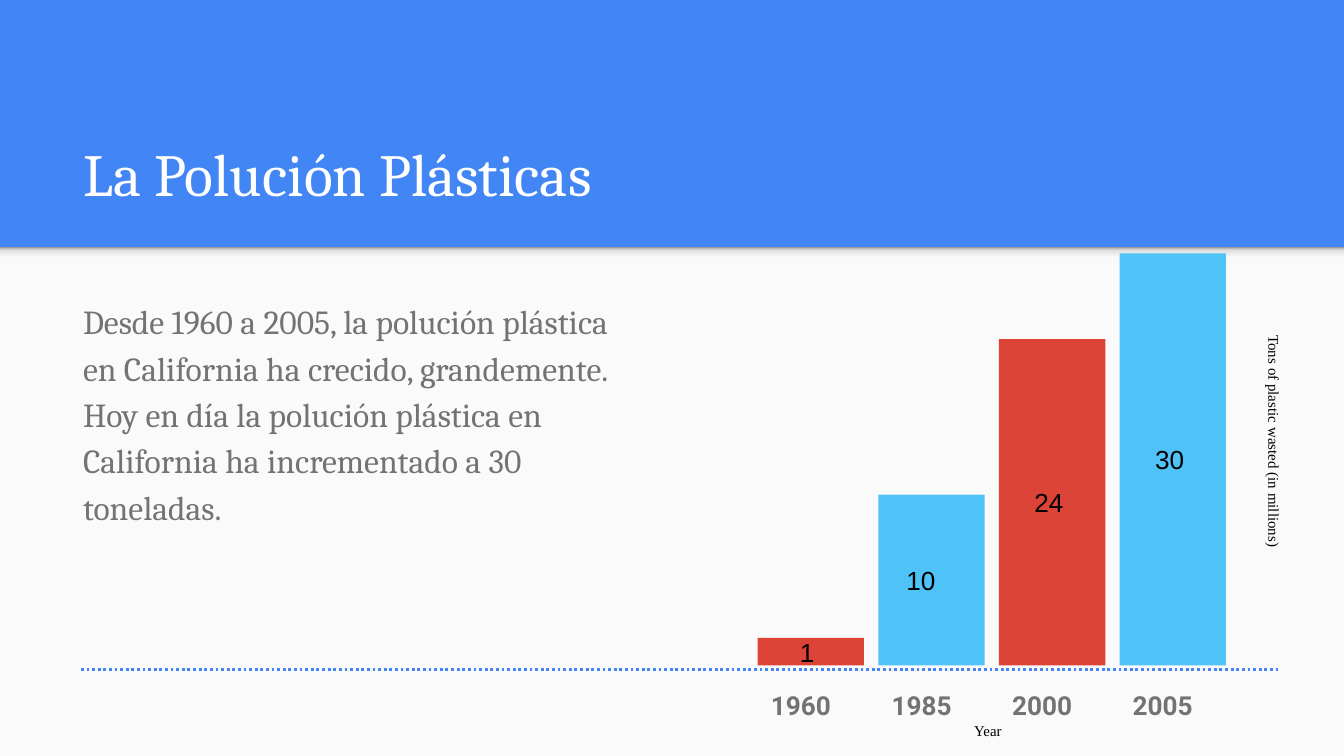
"""Build the slide on plastic pollution in California with its bar graphic."""
from lxml.etree import SubElement
from pptx import Presentation
from pptx.dml.color import RGBColor
from pptx.enum.dml import MSO_LINE
from pptx.enum.shapes import MSO_CONNECTOR, MSO_SHAPE
from pptx.enum.text import MSO_ANCHOR, MSO_AUTO_SIZE, PP_ALIGN
from pptx.oxml.ns import qn
from pptx.util import Cm, Pt


def rgb(color):
    """Return the colour for a hex string."""
    return RGBColor.from_string(color)


def write(tf, text, size, font, color, anchor=MSO_ANCHOR.TOP):
    """Fill a text frame with one left-aligned paragraph and return it."""
    tf.word_wrap = True
    tf.auto_size = MSO_AUTO_SIZE.NONE
    tf.vertical_anchor = anchor
    tf.margin_left = tf.margin_right = tf.margin_top = tf.margin_bottom = Cm(0.25)
    p = tf.paragraphs[0]
    p.text = text
    p.alignment = PP_ALIGN.LEFT
    p.font.size = Pt(size)
    p.font.name = font
    p.font.color.rgb = rgb(color)
    return p


prs = Presentation()
prs.slide_width, prs.slide_height = Cm(25.4), Cm(14.29)
s = prs.slides.add_slide(prs.slide_layouts[5])
s.background.fill.solid()
s.background.fill.fore_color.rgb = rgb("4285F4")

title = s.shapes.title
title.left, title.top, title.width, title.height = Cm(1.32), Cm(2.06), Cm(22.83), Cm(2.13)
write(title.text_frame, "La Polución Plásticas", 32, "Cambria", "FFFFFF", MSO_ANCHOR.BOTTOM)

panel = s.shapes.add_shape(MSO_SHAPE.RECTANGLE, 0, Cm(4.67), Cm(25.4), Cm(9.62))
panel.fill.solid()
panel.fill.fore_color.rgb = rgb("FAFAFA")

shade = s.shapes.add_shape(MSO_SHAPE.RECTANGLE, 0, Cm(4.67), Cm(25.4), Cm(0.3))
shade.fill.gradient()
shade.fill.gradient_angle = 90
stops = shade.fill._fill._gradFill.find(qn("a:gsLst"))
for gs in list(stops):
    stops.remove(gs)
for pos, color in [(0, "F9F9F9"), (36, "F9F9F9"), (80, "DEDEDE"), (100, "999999")]:
    gs = SubElement(stops, qn("a:gs"), pos=str(pos * 1000))
    SubElement(gs, qn("a:srgbClr"), val=color)

for sp in (panel, shade):
    sp.line.fill.background()
    sp.shadow.inherit = False

body = s.shapes.add_textbox(Cm(1.32), Cm(5.33), Cm(10.87), Cm(7.52))
p = write(
    body.text_frame,
    "Desde 1960 a 2005, la polución plástica en California ha crecido, grandemente. "
    "Hoy en día la polución plástica en California ha incrementado a 30 toneladas.",
    18, "Cambria", "737373",
)
p.line_spacing = 1.15
p.space_after = Pt(16)

left, pitch, base = 14.32, 2.28, 12.58
bars = [
    ("1960", "1", 0.52, 0.8, "DB4437"),
    ("1985", "10", 3.23, 0.53, "4FC3F7"),
    ("2000", "24", 6.17, 0.67, "DB4437"),
    ("2005", "30", 7.79, 0.67, "4FC3F7"),
]
frame = s.shapes.add_table(1, len(bars), Cm(left), Cm(12.73), Cm(pitch * len(bars)), Cm(0.66))
table = frame.table
table.first_row = table.horz_banding = False
table._tbl.tblPr.find(qn("a:tableStyleId")).text = "{2D5ABB26-0587-4C30-8999-92F81FD0307C}"

for i, (year, tons, height, indent, color) in enumerate(bars):
    cell = table.cell(0, i)
    cell.fill.background()
    cell.margin_left = cell.margin_right = cell.margin_top = cell.margin_bottom = Cm(0.25)
    p = cell.text_frame.paragraphs[0]
    p.text = year
    p.line_spacing = 1.15
    p.font.size = Pt(14)
    p.font.name = "Roboto"
    p.font.bold = True
    p.font.color.rgb = rgb("737373")

    bar = s.shapes.add_shape(
        MSO_SHAPE.RECTANGLE, Cm(left + i * pitch), Cm(base - height), Cm(2.01), Cm(height)
    )
    bar.fill.solid()
    bar.fill.fore_color.rgb = rgb(color)
    bar.line.fill.background()
    bar.shadow.inherit = False
    write(bar.text_frame, tons, 14, "Arial", "000000", MSO_ANCHOR.MIDDLE)
    bar.text_frame.margin_left = Cm(indent)

axis = s.shapes.add_connector(MSO_CONNECTOR.STRAIGHT, Cm(24.16), Cm(12.65), Cm(1.52), Cm(12.65))
axis.line.color.rgb = rgb("4285F4")
axis.line.width = Pt(1.5)
axis.line.dash_style = MSO_LINE.ROUND_DOT
SubElement(axis._element.spPr, qn("a:effectLst"))

for text, x, y, width, height, angle in [
    ("Year", 18.16, 13.39, 1.17, 0.51, 0),
    ("Tons of plastic wasted (in millions)", 21.26, 8.36, 5.51, 0.97, 90),
]:
    label = s.shapes.add_textbox(Cm(x), Cm(y), Cm(width), Cm(height))
    label.rotation = angle
    write(label.text_frame, text, 8, "Times New Roman", "000000")

prs.save("out.pptx")
